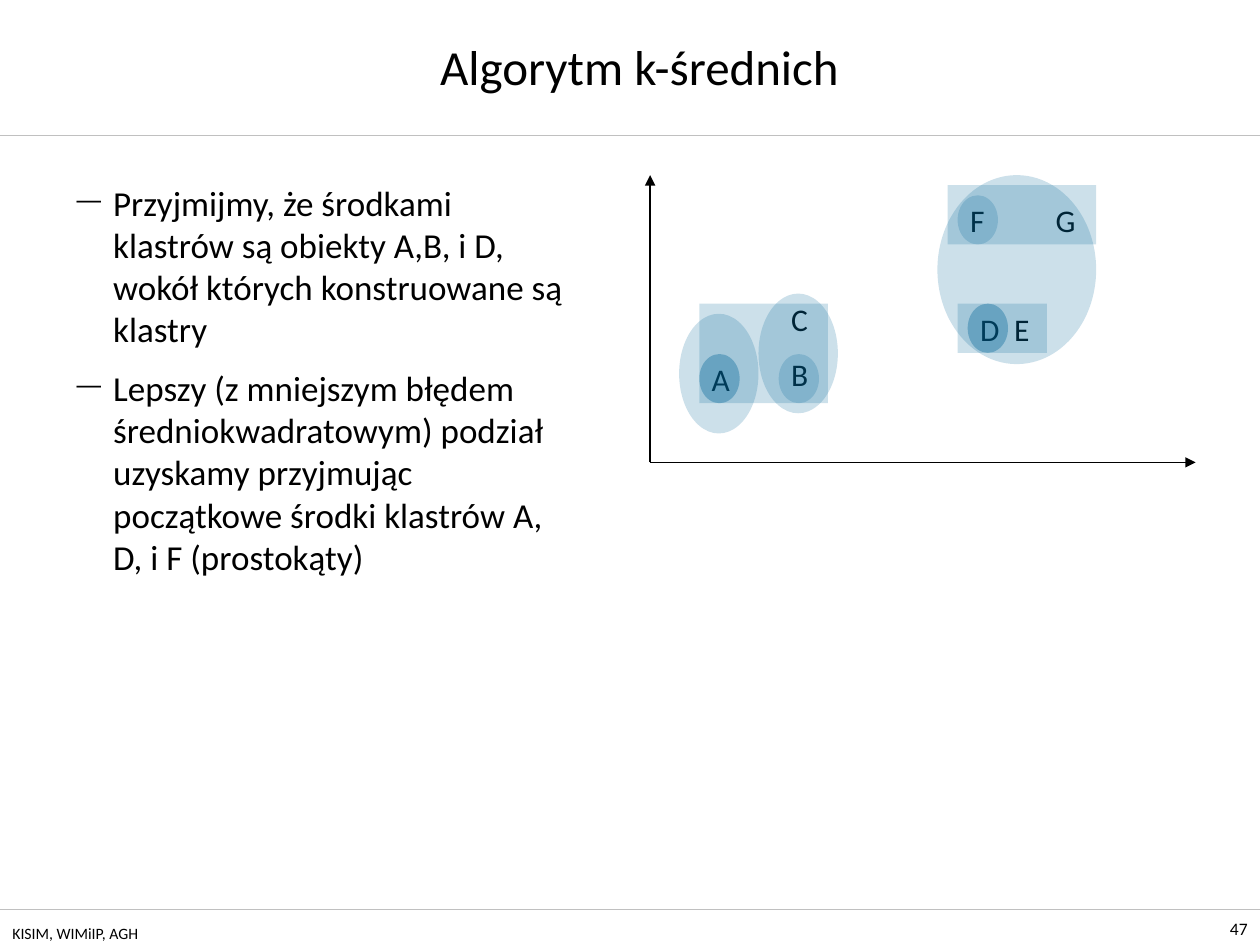
from typing import NamedTuple

from lxml.etree import SubElement
from pptx import Presentation
from pptx.dml.color import RGBColor
from pptx.enum.shapes import MSO_CONNECTOR, MSO_SHAPE
from pptx.enum.text import MSO_ANCHOR, PP_ALIGN
from pptx.oxml.ns import qn
from pptx.util import Inches, Pt

BLACK = RGBColor(0x00, 0x00, 0x00)
RULE_GRAY = RGBColor(0xC0, 0xC0, 0xC0)
CLUSTER_BLUE = RGBColor(0x00, 0x66, 0x99)
FONT = "Calibri"
CLUSTER_OPACITY = 20
HANGING = Inches(0.29)


class Line(NamedTuple):
    start: tuple[float, float]
    end: tuple[float, float]
    color: RGBColor
    width: float
    arrow: bool = False


class Label(NamedTuple):
    text: str
    box: tuple[float, float, float, float]
    size: float = 18
    align: PP_ALIGN = PP_ALIGN.LEFT
    anchor: MSO_ANCHOR = MSO_ANCHOR.TOP


class Cluster(NamedTuple):
    geometry: MSO_SHAPE
    box: tuple[float, float, float, float]


def seed(left: float, top: float) -> Cluster:
    return Cluster(MSO_SHAPE.OVAL, (left, top, 0.32, 0.39))


def point(name: str, left: float, top: float) -> Label:
    return Label(name, (left, top, 0.35, 0.4))


RULES = [Line((0, y), (10, y), RULE_GRAY, 0.25) for y in (1.07, 7.22)]
ORIGIN = (5.16, 3.67)
AXES = [Line(ORIGIN, end, BLACK, 0.75, True) for end in ((5.16, 1.39), (9.49, 3.67))]

FOOTERS = [
    Label("47", (9.49, 7.22, 0.51, 0.28), 10, PP_ALIGN.RIGHT, MSO_ANCHOR.BOTTOM),
    Label("KISIM, WIMiIP, AGH", (0, 7.28, 3.17, 0.22), 9),
]
POINTS = [
    point("A", 5.55, 2.81),
    point("C", 6.18, 2.33),
    point("B", 6.18, 2.77),
    point("F", 7.6, 1.55),
    point("G", 8.28, 1.55),
    point("D", 7.68, 2.41),
    point("E", 7.95, 2.41),
]

SEED_A = seed(5.55, 2.81)
SEED_B = seed(6.18, 2.81)
SEED_D = seed(7.68, 2.41)
SEED_F = seed(7.6, 1.55)
CLUSTERS = [
    Cluster(MSO_SHAPE.OVAL, (5.39, 2.49, 0.63, 0.95)),
    SEED_A,
    Cluster(MSO_SHAPE.OVAL, (6.02, 2.33, 0.63, 0.95)),
    SEED_B,
    Cluster(MSO_SHAPE.OVAL, (7.44, 1.39, 1.26, 1.5)),
    SEED_D,
    SEED_A,
    SEED_D,
    SEED_F,
    Cluster(MSO_SHAPE.RECTANGLE, (5.55, 2.41, 1.02, 0.79)),
    Cluster(MSO_SHAPE.RECTANGLE, (7.52, 1.47, 1.18, 0.47)),
    Cluster(MSO_SHAPE.RECTANGLE, (7.6, 2.41, 0.71, 0.39)),
]

STATEMENTS = [
    "Przyjmijmy, że środkami klastrów są obiekty A,B, i D, "
    "wokół których konstruowane są klastry",
    "Lepszy (z mniejszym błędem średniokwadratowym) podział uzyskamy "
    "przyjmując początkowe środki klastrów A, D, i F (prostokąty)",
]


def style_runs(paragraph, size: float) -> None:
    for run in paragraph.runs:
        run.font.name = FONT
        run.font.size = Pt(size)
        run.font.color.rgb = BLACK


def draw_line(slide, line: Line) -> None:
    connector = slide.shapes.add_connector(
        MSO_CONNECTOR.STRAIGHT, *map(Inches, line.start + line.end)
    )
    connector.line.color.rgb = line.color
    connector.line.width = Pt(line.width)
    if line.arrow:
        SubElement(connector.line._get_or_add_ln(), qn("a:tailEnd"), type="triangle")
    SubElement(connector._element.spPr, qn("a:effectLst"))


def draw_label(slide, label: Label) -> None:
    frame = slide.shapes.add_textbox(*map(Inches, label.box)).text_frame
    frame.word_wrap = True
    frame.vertical_anchor = label.anchor
    frame.text = label.text
    frame.paragraphs[0].alignment = label.align
    style_runs(frame.paragraphs[0], label.size)


def draw_cluster(slide, cluster: Cluster) -> None:
    region = slide.shapes.add_shape(cluster.geometry, *map(Inches, cluster.box))
    region.shadow.inherit = False
    region.line.fill.background()
    region.fill.solid()
    region.fill.fore_color.rgb = CLUSTER_BLUE
    color = region._element.spPr.find(qn("a:solidFill"))[0]
    SubElement(color, qn("a:alpha"), val=str(CLUSTER_OPACITY * 1000))


def write_title(slide, text: str) -> None:
    title = slide.shapes.title
    title.left, title.top, title.width, title.height = map(
        Inches, (0.98, 0.21, 8.19, 0.63)
    )
    title.text_frame.text = text
    title.text_frame.vertical_anchor = MSO_ANCHOR.MIDDLE
    title.text_frame.paragraphs[0].alignment = PP_ALIGN.CENTER
    style_runs(title.text_frame.paragraphs[0], 28)


def write_statements(slide, statements: list[str]) -> None:
    frame = slide.shapes.add_textbox(*map(Inches, (0.51, 1.39, 4.17, 5.59))).text_frame
    frame.word_wrap = True
    frame.text = "\n".join(statements)
    for index, paragraph in enumerate(frame.paragraphs):
        properties = paragraph._p.get_or_add_pPr()
        properties.set("marL", str(HANGING))
        properties.set("indent", str(-HANGING))
        SubElement(properties, qn("a:buSzPct"), val="70000")
        SubElement(properties, qn("a:buChar"), char="—")
        if index:
            paragraph.space_before = Pt(10)
        style_runs(paragraph, 20)


def main() -> None:
    deck = Presentation()
    deck.slide_width, deck.slide_height = Inches(10), Inches(7.5)
    slide = deck.slides.add_slide(deck.slide_layouts.get_by_name("Title Only"))
    write_title(slide, "Algorytm k-średnich")
    write_statements(slide, STATEMENTS)
    for line in RULES + AXES:
        draw_line(slide, line)
    for label in FOOTERS + POINTS:
        draw_label(slide, label)
    for cluster in CLUSTERS:
        draw_cluster(slide, cluster)
    deck.save("out.pptx")


if __name__ == "__main__":
    main()
